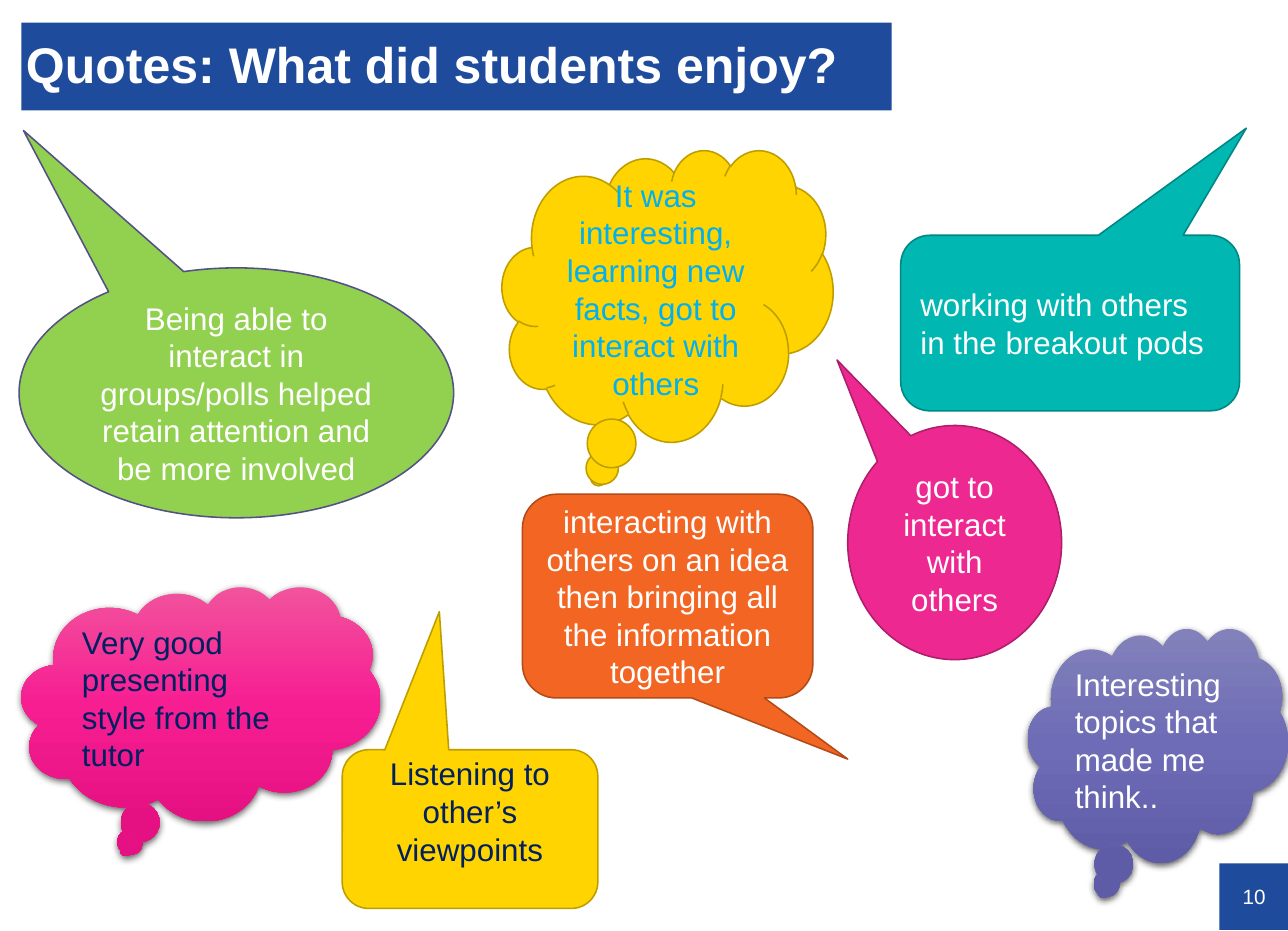
import copy

import lxml.etree
import pptx
import pptx.dml.color
import pptx.enum.shapes
import pptx.enum.text
import pptx.oxml
import pptx.oxml.ns
import pptx.util

RGB = pptx.dml.color.RGBColor
SHAPE = pptx.enum.shapes.MSO_SHAPE
ALIGN = pptx.enum.text.PP_ALIGN
qn = pptx.oxml.ns.qn

PX = 9144  # EMU per px, 100 px to the inch

WHITE = RGB(0xFF, 0xFF, 0xFF)
BLUE = RGB(0x1E, 0x4B, 0x9B)
NAVY = RGB(0x00, 0x20, 0x60)
SKY = RGB(0x00, 0xB0, 0xF0)
ORANGE = RGB(0xF2, 0x65, 0x22)
DARK_ORANGE = RGB(0xB3, 0x4B, 0x19)
YELLOW = RGB(0xFF, 0xD4, 0x00)
DARK_YELLOW = RGB(0xBD, 0x9D, 0x00)
GREEN = RGB(0x92, 0xD0, 0x50)
PURPLE = RGB(0x54, 0x52, 0x84)
PINK = RGB(0xED, 0x28, 0x91)
DARK_PINK = RGB(0xAF, 0x1E, 0x6B)
TEAL = RGB(0x00, 0xB7, 0xB2)
DARK_TEAL = RGB(0x00, 0x87, 0x84)
PINK_FADE = [RGB(0xF1, 0x53, 0x9D), RGB(0xF7, 0x1E, 0x92), RGB(0xE5, 0x11, 0x82)]
PURPLE_FADE = [RGB(0x82, 0x81, 0xBB), RGB(0x6E, 0x6C, 0xB6), RGB(0x5E, 0x5C, 0xA6)]


def write(sp, text, size=20, color=WHITE, bold=False, align=ALIGN.CENTER,
          insets=(10, 5, 10, 5), spacing=None):
    """Put one formatted paragraph in a shape; insets are left, top, right, bottom."""
    tf = sp.text_frame
    tf.word_wrap = True
    tf.vertical_anchor = pptx.enum.text.MSO_ANCHOR.MIDDLE
    tf.margin_left, tf.margin_top, tf.margin_right, tf.margin_bottom = (
        i * PX for i in insets)
    p = tf.paragraphs[0]
    p.alignment = align
    p.line_spacing = spacing
    r = p.add_run()
    r.text = text
    r.font.name = "Arial"
    r.font.size = pptx.util.Pt(size)
    r.font.bold = bold
    r.font.color.rgb = color


class QuoteSlide:
    def __init__(self, prs):
        self.s = prs.slides.add_slide(prs.slide_layouts[6])

    def shape(self, kind, box, fill, line=None, adj=()):
        sp = self.s.shapes.add_shape(kind, *(v * PX for v in box))
        sp.shadow.inherit = False
        for i, value in enumerate(adj):
            sp.adjustments[i] = value
        if isinstance(fill, list):
            self.fade(sp, fill)
        else:
            sp.fill.solid()
            sp.fill.fore_color.rgb = fill
        if line is None:
            sp.line.fill.background()
        else:
            sp.line.color.rgb = line
            sp.line.width = pptx.util.Pt(1)
        return sp

    def fade(self, sp, colors):
        """Fill from top to bottom with evenly spaced colours."""
        sp.fill.gradient()
        sp.fill.gradient_angle = 270
        stops = sp._element.spPr.find(".//" + qn("a:gsLst"))
        while len(stops) < len(colors):
            stops.append(copy.deepcopy(stops[0]))
        for i, (stop, color) in enumerate(zip(sp.fill.gradient_stops, colors)):
            stop.position = i / (len(colors) - 1)
            stop.color.rgb = color

    def banner(self, box, text, **style):
        write(self.shape(SHAPE.RECTANGLE, box, BLUE), text, **style)

    def bubble(self, kind, box, text, fill, line, tail, **style):
        """Speech bubble; tail is the tip's offset from the centre."""
        write(self.shape(kind, box, fill, line, tail), text, **style)

    def cloud(self, box, text, fill, line=None, **style):
        sp = self.shape(SHAPE.CLOUD_CALLOUT, box, fill, line)
        if line is None:
            self.drop_shadow(sp)
        write(sp, text, **style)

    def drop_shadow(self, sp):
        effects = sp._element.spPr.find(qn("a:effectLst"))
        shadow = lxml.etree.SubElement(
            effects, qn("a:outerShdw"), blurRad="57150", dist="19050",
            dir="5400000", algn="ctr", rotWithShape="0")
        color = lxml.etree.SubElement(shadow, qn("a:srgbClr"), val="000000")
        lxml.etree.SubElement(color, qn("a:alpha"), val="63000")


def main():
    prs = pptx.Presentation()
    prs.slide_width, prs.slide_height = 1144 * PX, 827 * PX
    slide = QuoteSlide(prs)
    rounded = SHAPE.ROUNDED_RECTANGULAR_CALLOUT
    oval = SHAPE.OVAL_CALLOUT

    # Page number and title
    slide.banner((1083, 767, 62, 59), "10", size=13.2, insets=(0, 0, 0, 0))
    slide.banner((19, 20, 773, 78), "Quotes: What did students enjoy?", size=32,
                 bold=True, align=ALIGN.LEFT, insets=(4, 2, 0, 0), spacing=0.9)

    # Thought clouds
    slide.cloud((19, 521, 319, 208), "Very good presenting style from the tutor",
                PINK_FADE, color=NAVY, align=ALIGN.LEFT)
    slide.cloud((446, 133, 294, 259),
                "It was interesting, learning new facts, got to interact with others",
                YELLOW, DARK_YELLOW, color=SKY)
    slide.cloud((913, 558, 231, 208), "Interesting topics that made me think..",
                PURPLE_FADE, align=ALIGN.LEFT)

    # Rounded speech bubbles
    slide.bubble(rounded, (464, 439, 258, 181),
                 "interacting with others on an idea then bringing all the "
                 "information together", ORANGE, DARK_ORANGE, (0.62, 0.8))
    slide.bubble(rounded, (304, 666, 227, 141), "Listening to other’s viewpoints",
                 YELLOW, DARK_YELLOW, (-0.12, -1.37), color=NAVY,
                 insets=(10, 5, 10, 37))
    slide.bubble(rounded, (800, 209, 301, 156),
                 "working with others in the breakout pods",
                 TEAL, DARK_TEAL, (0.52, -1.11), align=ALIGN.LEFT)

    # Oval speech bubbles
    slide.bubble(oval, (17, 238, 386, 222),
                 "Being able to interact in groups/polls helped retain attention "
                 "and be more involved", GREEN, PURPLE, (-0.49, -1.05))
    slide.bubble(oval, (753, 378, 190, 208), "got to interact with others",
                 PINK, DARK_PINK, (-0.55, -0.78))

    prs.save("out.pptx")


if __name__ == "__main__":
    main()
